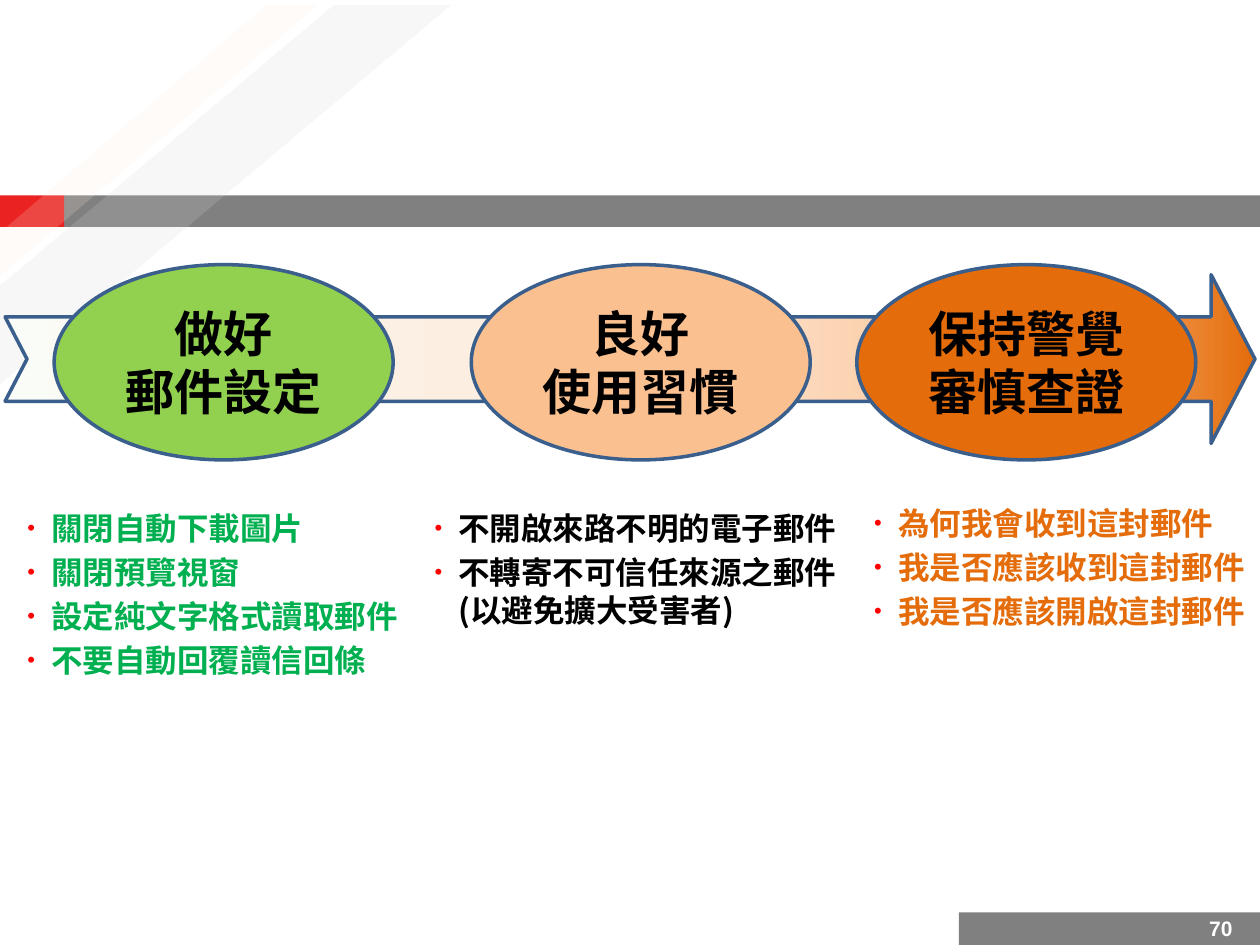
import pptx
import pptx.util
import pptx.oxml
import pptx.oxml.ns
import pptx.dml.color
import pptx.enum.shapes
import pptx.enum.text

Inches = pptx.util.Inches
Pt = pptx.util.Pt
SHAPE = pptx.enum.shapes.MSO_SHAPE
ALIGN = pptx.enum.text.PP_ALIGN
ANCHOR = pptx.enum.text.MSO_ANCHOR

COLORS = {
    "gray": "808080", "red": "EA2222", "cream": "FDEADA", "silver": "D9D9D9",
    "outline": "3A5F8C", "lime": "92D050", "peach": "FAC090", "orange": "E46C0A",
    "green": "00B050", "black": "000000", "white": "FFFFFF", "bullet": "FF0000",
    "mist": "FAFCF7",
}
LATIN = "Arial"
CJK = "Noto Sans CJK SC"

BARS = [
    ((0.51, 1.55, 9.49, 0.25), "gray"),
    ((0, 1.55, 0.51, 0.25), "red"),
    ((7.61, 7.24, 2.4, 0.28), "gray"),
]
STRIPES = [
    ((0, 0.04, 2.52, 2.15), "cream", 0.84),
    ((0, 0.04, 3.58, 3.01), "silver", 0.74),
]
STRIPE_OPACITY = 19
ARROW_BOX = (0.04, 2.18, 9.92, 1.34)
ARROW_STOPS = [(0, "mist"), (50, "cream"), (83, "peach"), (100, "orange")]
STEPS = [
    {"left": 0.43, "fill": "lime", "title": ["做好", "郵件設定"],
     "box": (0.12, 3.99, 3.24, 1.57), "color": "green",
     "items": ["關閉自動下載圖片", "關閉預覽視窗", "設定純文字格式讀取郵件", "不要自動回覆讀信回條"]},
    {"left": 3.74, "fill": "peach", "title": ["良好", "使用習慣"],
     "box": (3.35, 3.99, 3.45, 1.65), "color": "black",
     "items": ["不開啟來路不明的電子郵件", "不轉寄不可信任來源之郵件(以避免擴大受害者)"]},
    {"left": 6.8, "fill": "orange", "title": ["保持警覺審慎查證"],
     "box": (6.84, 3.95, 3.2, 1.65), "color": "orange",
     "items": ["為何我會收到這封郵件", "我是否應該收到這封郵件", "我是否應該開啟這封郵件"]},
]
OVAL_TOP, OVAL_WIDTH, OVAL_HEIGHT = 2.1, 2.69, 1.55
HANGING = 0.19
PAGE_NUMBER = "70"


def rgb(name):
    return pptx.dml.color.RGBColor.from_string(COLORS[name])


def element(xml):
    return pptx.oxml.parse_xml(xml.replace(">", f" {pptx.oxml.ns.nsdecls('a')}>", 1))


def add_shape(slide, kind, box, fill, outlined=False):
    shape = slide.shapes.add_shape(kind, *map(Inches, box))
    shape.shadow.inherit = False
    shape.fill.solid()
    shape.fill.fore_color.rgb = rgb(fill)
    if outlined:
        shape.line.color.rgb = rgb("outline")
        shape.line.width = Pt(2)
    else:
        shape.line.fill.background()
    return shape


def add_stripe(slide, box, fill, adjustment):
    stripe = add_shape(slide, SHAPE.DIAGONAL_STRIPE, box, fill)
    stripe.adjustments[0] = adjustment
    color = stripe.fill._xPr.find(".//" + pptx.oxml.ns.qn("a:srgbClr"))
    color.append(element(f'<a:alpha val="{STRIPE_OPACITY * 1000}"></a:alpha>'))


def add_arrow(slide):
    arrow = add_shape(slide, SHAPE.NOTCHED_RIGHT_ARROW, ARROW_BOX, "peach", True)
    arrow.adjustments[0] = 0.5
    arrow.adjustments[1] = 0.26
    stops = "".join(
        f'<a:gs pos="{position * 1000}"><a:srgbClr val="{COLORS[name]}"/></a:gs>'
        for position, name in ARROW_STOPS)
    properties = arrow._element.spPr
    solid = properties.find(pptx.oxml.ns.qn("a:solidFill"))
    properties.replace(solid, element(
        f'<a:gradFill><a:gsLst>{stops}</a:gsLst><a:lin ang="0" scaled="0"/></a:gradFill>'))


def add_bullet(paragraph):
    properties = paragraph._p.get_or_add_pPr()
    properties.set("marL", str(Inches(HANGING)))
    properties.set("indent", str(-Inches(HANGING)))
    for xml in (f'<a:buClr><a:srgbClr val="{COLORS["bullet"]}"/></a:buClr>',
                '<a:buSzPct val="70000"></a:buSzPct>',
                f'<a:buFont typeface="{LATIN}"></a:buFont>',
                '<a:buChar char="•"></a:buChar>'):
        properties.append(element(xml))


def write(frame, lines, size, color, font, paragraph_format, bulleted=False):
    frame.word_wrap = True
    for index, text in enumerate(lines):
        paragraph = frame.paragraphs[0] if index == 0 else frame.add_paragraph()
        if bulleted:
            add_bullet(paragraph)
            paragraph.space_before = Pt(3.6 if index else 0)
        for name, value in paragraph_format.items():
            setattr(paragraph, name, value)
        run = paragraph.add_run()
        run.text = text
        for name, value in {"size": Pt(size), "bold": True, "name": font}.items():
            setattr(run.font, name, value)
        run.font.color.rgb = rgb(color)
        run.font._element.append(element(f'<a:ea typeface="{CJK}"></a:ea>'))


def add_step(slide, step):
    box = (step["left"], OVAL_TOP, OVAL_WIDTH, OVAL_HEIGHT)
    oval = add_shape(slide, SHAPE.OVAL, box, step["fill"], True)
    frame = oval.text_frame
    frame.vertical_anchor = ANCHOR.MIDDLE
    frame.margin_left = frame.margin_right = 0
    write(frame, step["title"], 28, "black", LATIN,
          {"alignment": ALIGN.CENTER, "line_spacing": Pt(33)})
    details = slide.shapes.add_textbox(*map(Inches, step["box"]))
    write(details.text_frame, step["items"], 18, step["color"], CJK,
          {"alignment": ALIGN.LEFT, "line_spacing": Pt(21.6)}, bulleted=True)


def main():
    presentation = pptx.Presentation()
    presentation.slide_width = Inches(10)
    presentation.slide_height = Inches(7.5)
    slide = presentation.slides.add_slide(presentation.slide_layouts[6])
    for box, fill in BARS:
        add_shape(slide, SHAPE.RECTANGLE, box, fill)
    for stripe in STRIPES:
        add_stripe(slide, *stripe)
    add_arrow(slide)
    for step in STEPS:
        add_step(slide, step)
    number = slide.shapes.add_textbox(*map(Inches, (9.33, 7.24, 0.55, 0.26)))
    number.text_frame.vertical_anchor = ANCHOR.MIDDLE
    write(number.text_frame, [PAGE_NUMBER], 12, "white", LATIN, {"alignment": ALIGN.RIGHT})
    presentation.save("out.pptx")


if __name__ == "__main__":
    main()
